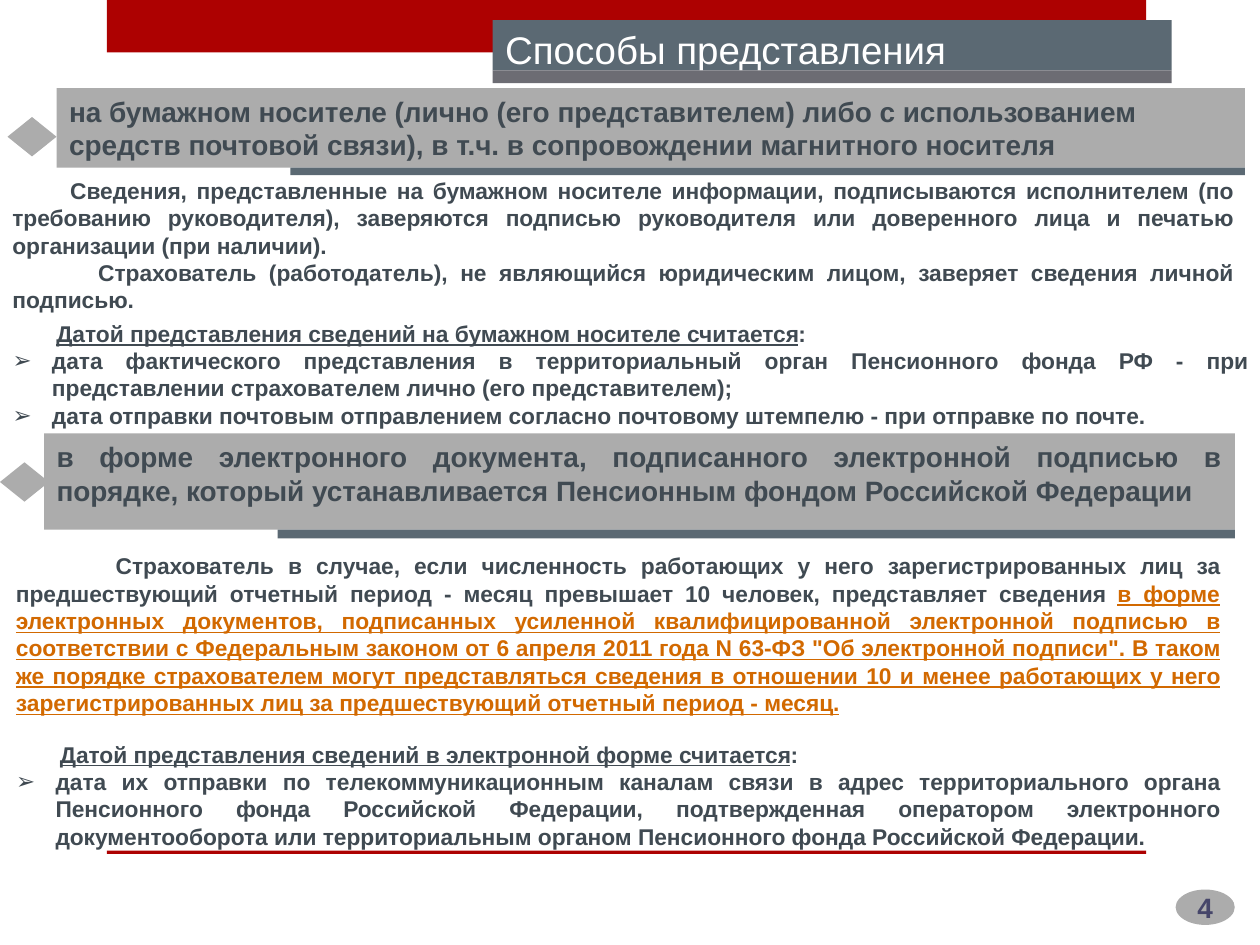
from dataclasses import dataclass

from lxml.etree import SubElement
from pptx import Presentation
from pptx.dml.color import RGBColor
from pptx.enum.shapes import MSO_SHAPE
from pptx.enum.text import MSO_ANCHOR, MSO_AUTO_SIZE, PP_ALIGN
from pptx.oxml.ns import qn
from pptx.util import Pt


@dataclass(frozen=True)
class Theme:
    font: str = "Arial"
    red: str = "AD0101"
    slate: str = "5B6973"
    shade: str = "6C6C73"
    gray: str = "ACACAC"
    text: str = "404A52"
    accent: str = "D26900"
    number: str = "46466A"
    white: str = "FFFFFF"
    title_size: float = 22
    band_size: float = 16
    body_size: float = 13


class Deck:
    def __init__(self, theme):
        self.theme = theme
        self.prs = Presentation()
        self.prs.slide_width, self.prs.slide_height = Pt(720), Pt(540)
        self.s = self.prs.slides.add_slide(self.prs.slide_layouts[3])

    def place(self, sp, x, y, w, h):
        sp.left, sp.top, sp.width, sp.height = Pt(x), Pt(y), Pt(w), Pt(h)

    def frame(self, sp, anchor):
        tf = sp.text_frame
        tf.word_wrap = True
        tf.auto_size = MSO_AUTO_SIZE.NONE
        tf.vertical_anchor = anchor
        return tf

    def style(self, p, size, color, bold=True, align=PP_ALIGN.JUSTIFY):
        p.alignment = align
        p.space_before = Pt(0)
        p.font.name, p.font.size, p.font.bold = self.theme.font, Pt(size), bold
        p.font.color.rgb = RGBColor.from_string(color)

    def indent(self, p, left, first, bullet=None):
        pPr = p._p.get_or_add_pPr()
        pPr.set("marL", str(Pt(left)))
        pPr.set("indent", str(Pt(first)))
        mark = pPr.makeelement(qn("a:buChar"), char=bullet) if bullet else pPr.makeelement(qn("a:buNone"))
        pPr.insert_element_before(mark, "a:tabLst", "a:defRPr", "a:extLst")

    def shape(self, kind, color, x, y, w, h):
        sp = self.s.shapes.add_shape(kind, Pt(x), Pt(y), Pt(w), Pt(h))
        sp.shadow.inherit = False
        sp.fill.solid()
        sp.fill.fore_color.rgb = RGBColor.from_string(color)
        sp.line.fill.background()
        return sp

    def rect(self, color, x, y, w, h):
        return self.shape(MSO_SHAPE.RECTANGLE, color, x, y, w, h)

    def backdrop(self, color, x, y, w, h):
        sp = self.rect(color, x, y, w, h)
        self.s.shapes._spTree.insert(2, sp._element)

    def title(self, text, x, y, w, h, edge):
        sp = self.s.shapes.title
        self.place(sp, x, y, w, h)
        sp.fill.solid()
        sp.fill.fore_color.rgb = RGBColor.from_string(self.theme.slate)
        p = self.frame(sp, MSO_ANCHOR.TOP).paragraphs[0]
        p.text = text
        self.style(p, self.theme.title_size, self.theme.white, False, PP_ALIGN.LEFT)
        self.rect(self.theme.shade, x, y + h, w, edge)

    def band(self, text, x, y, w, h, edge, diamond_x, align):
        sp = self.rect(self.theme.gray, x, y, w, h)
        p = self.frame(sp, MSO_ANCHOR.TOP).paragraphs[0]
        p.text = text
        self.style(p, self.theme.band_size, self.theme.text, align=align)
        self.rect(self.theme.slate, x + 133.5, y + h, w - 133.5, edge)
        self.shape(MSO_SHAPE.DIAMOND, self.theme.gray, diamond_x, y + 16.5, 28, 22.5)

    def body(self, x, y, w, h, paragraphs, anchor=MSO_ANCHOR.MIDDLE):
        sp = self.s.shapes.add_textbox(Pt(x), Pt(y), Pt(w), Pt(h))
        tf = self.frame(sp, anchor)
        for i, (first, text, emphasis) in enumerate(paragraphs):
            p = tf.add_paragraph() if i else tf.paragraphs[0]
            self.style(p, self.theme.body_size, self.theme.text)
            self.indent(p, 0, first)
            p.add_run().text = text
            if emphasis:
                r = p.add_run()
                r.text = emphasis
                r.font.underline = True
                r.font.color.rgb = RGBColor.from_string(self.theme.accent)

    def bullets(self, idx, x, y, w, h, heading, items):
        sp = self.s.placeholders[idx]
        self.place(sp, x, y, w, h)
        tf = self.frame(sp, MSO_ANCHOR.MIDDLE)
        p = tf.paragraphs[0]
        self.style(p, self.theme.body_size, self.theme.text)
        self.indent(p, 0, 25)
        r = p.add_run()
        r.text = heading
        r.font.underline = True
        p.add_run().text = ":"
        for item in items:
            p = tf.add_paragraph()
            p.text = item
            self.style(p, self.theme.body_size, self.theme.text)
            self.indent(p, 22.5, -22.5, "➢")

    def page_number(self, text, x, y, w, h):
        sp = self.shape(MSO_SHAPE.OVAL, self.theme.gray, x, y, w, h)
        tf = self.frame(sp, MSO_ANCHOR.MIDDLE)
        p = tf.paragraphs[0]
        p.text = text
        self.style(p, self.theme.band_size, self.theme.number, align=PP_ALIGN.CENTER)


def main():
    theme = Theme()
    d = Deck(theme)
    d.backdrop(theme.red, 61, 0, 594, 30)
    d.backdrop(theme.red, 61, 486, 594, 2)
    d.title("Способы представления", 281.5, 11.5, 388, 28.8, 7.2)

    d.band("на бумажном носителе (лично (его представителем) либо с использованием "
           "средств почтовой связи), в т.ч. в сопровождении магнитного носителя",
           32.4, 50.4, 679, 45.4, 4.3, 4.3, PP_ALIGN.LEFT)
    d.body(0, 100.8, 711.4, 78.5, [
        (33, "Сведения, представленные на бумажном носителе информации, подписываются "
             "исполнителем (по требованию руководителя), заверяются подписью руководителя "
             "или доверенного лица и печатью организации (при наличии).", ""),
        (49, "Страхователь (работодатель), не являющийся юридическим лицом, заверяет "
             "сведения личной подписью.", ""),
    ])
    d.bullets(1, 0, 180, 720, 67.7, "Датой представления сведений на бумажном носителе считается", [
        "дата фактического представления в территориальный орган Пенсионного фонда РФ - "
        "при представлении страхователем лично (его представителем);",
        "дата отправки почтовым отправлением согласно почтовому штемпелю - при отправке по почте.",
    ])

    d.band("в форме электронного документа, подписанного электронной подписью в порядке, "
           "который устанавливается Пенсионным фондом Российской Федерации",
           25.2, 247.7, 680.4, 55, 5, 0, PP_ALIGN.JUSTIFY)
    d.body(2, 312, 702, 101, [
        (57, "Страхователь в случае, если численность работающих у него зарегистрированных лиц "
             "за предшествующий отчетный период - месяц превышает 10 человек, представляет сведения ",
             "в форме электронных документов, подписанных усиленной квалифицированной электронной "
             "подписью в соответствии с Федеральным законом от 6 апреля 2011 года N 63-ФЗ "
             "\"Об электронной подписи\". В таком же порядке страхователем могут представляться "
             "сведения в отношении 10 и менее работающих у него зарегистрированных лиц "
             "за предшествующий отчетный период - месяц."),
    ], MSO_ANCHOR.TOP)
    d.bullets(2, 2, 417.6, 702, 73.4, "Датой представления сведений в электронной форме считается", [
        "дата их отправки по телекоммуникационным каналам связи в адрес территориального органа "
        "Пенсионного фонда Российской Федерации, подтвержденная оператором электронного "
        "документооборота или территориальным органом Пенсионного фонда Российской Федерации.",
    ])
    d.page_number("4", 671.8, 508.3, 33.8, 20.2)
    d.prs.save("out.pptx")


if __name__ == "__main__":
    main()
